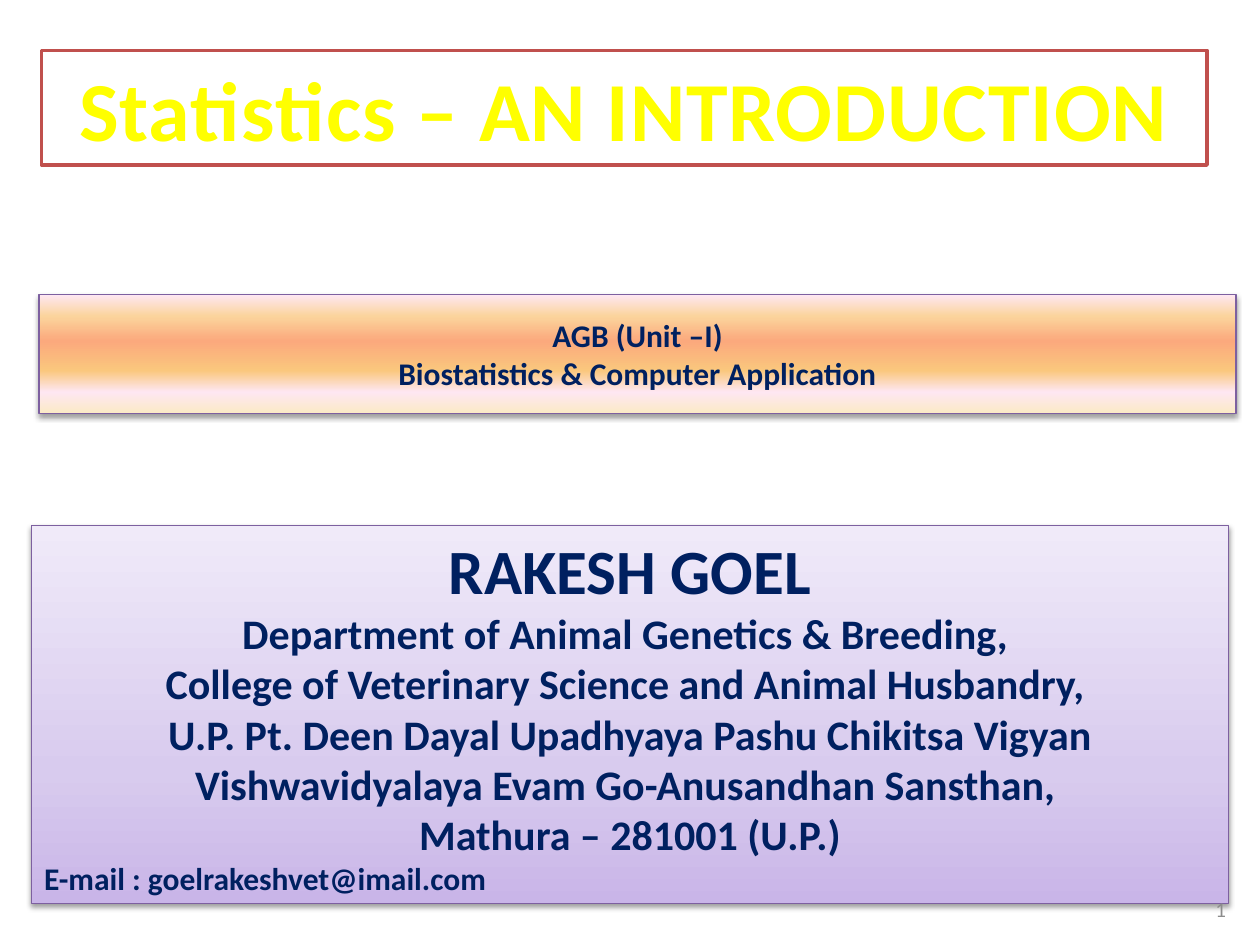
from lxml import etree
from pptx import Presentation
from pptx import util as u
from pptx.dml.color import RGBColor
from pptx.enum import shapes, text
from pptx.oxml.ns import qn

NAVY = "002060"
PURPLE = "7D60A0"
LILAC = [(0, "C9B5E8"), (35, "D8CBEE"), (100, "F0EAF9")]
SUNSET = [(0, "FBEAC7"), (18, "FEE7F2"), (36, "FAC77D"),
          (61, "FBA97D"), (82, "FBD49C"), (100, "FEE7F2")]
CENTER, LEFT, RIGHT = (text.PP_ALIGN.CENTER, text.PP_ALIGN.LEFT,
                       text.PP_ALIGN.RIGHT)


def color(hex_value):
    return RGBColor.from_string(hex_value)


class Deck:
    """Holds the shared style and the current slide."""

    font = {"name": "Calibri", "bold": True}

    def __init__(self, slide, ink):
        self.slide = slide
        self.ink = ink

    def place(self, shape, box):
        for side, inches in zip(("left", "top", "width", "height"), box):
            setattr(shape, side, u.Inches(inches))

    def outline(self, shape, hex_value, points):
        shape.line.color.rgb = color(hex_value)
        shape.line.width = u.Pt(points)

    def set_lines(self, shape, lines, **changes):
        """Fill in (text, size, alignment) lines; changes override the font."""
        frame = shape.text_frame
        frame.word_wrap = True
        frame.auto_size = text.MSO_AUTO_SIZE.NONE
        frame.vertical_anchor = text.MSO_ANCHOR.MIDDLE
        ink = changes.pop("ink", self.ink)
        for i, (words, size, align) in enumerate(lines):
            paragraph = frame.add_paragraph() if i else frame.paragraphs[0]
            paragraph.alignment = align
            paragraph.space_before = u.Pt(0)
            run = paragraph.add_run()
            run.text = words
            for key, value in {**self.font, "size": u.Pt(size), **changes}.items():
                setattr(run.font, key, value)
            run.font.color.rgb = color(ink)

    def title(self, words, box):
        heading = self.slide.shapes.title
        self.place(heading, box)
        heading.fill.solid()
        heading.fill.fore_color.rgb = color("FFFFFF")
        self.outline(heading, "C0504D", 2)
        self.set_lines(heading, [(words, 48, CENTER)], ink="FFFF00")
        heading.text_frame.auto_size = text.MSO_AUTO_SIZE.SHAPE_TO_FIT_TEXT
        heading.text_frame.paragraphs[0].runs[0].font._element.set("spc", "50")

    def panel(self, shape, box, stops, lines):
        """Give a shape a vertical gradient, a soft shadow and its lines."""
        self.place(shape, box)
        shape.fill.gradient()
        shape.fill.gradient_angle = 90
        stop_list = shape._element.spPr.find(".//" + qn("a:gsLst"))
        stop_list.clear()
        for percent, hex_value in stops:
            stop = etree.SubElement(stop_list, qn("a:gs"), pos=str(percent * 1000))
            etree.SubElement(stop, qn("a:srgbClr"), val=hex_value)
        self.outline(shape, PURPLE, 0.75)
        self.shadow(shape)
        self.set_lines(shape, lines)

    def shadow(self, shape):
        shape.shadow.inherit = False
        effects = shape._element.spPr.find(qn("a:effectLst"))
        outer = etree.SubElement(
            effects, qn("a:outerShdw"), blurRad=str(u.Pt(3.1)),
            dist=str(u.Pt(1.6)), dir="5400000", rotWithShape="0")
        black = etree.SubElement(outer, qn("a:srgbClr"), val="000000")
        etree.SubElement(black, qn("a:alpha"), val="38000")

    def affiliation(self, box, lines):
        self.panel(self.slide.placeholders[1], box, LILAC, lines)

    def course_band(self, box, lines):
        band = self.slide.shapes.add_shape(
            shapes.MSO_SHAPE.RECTANGLE, *map(u.Inches, box))
        self.panel(band, box, SUNSET, lines)

    def page_number(self, number, box):
        label = self.slide.shapes.add_textbox(*map(u.Inches, box))
        self.set_lines(label, [(number, 12, RIGHT)], ink="8C8C8C", bold=False)


def main():
    prs = Presentation()
    prs.slide_width, prs.slide_height = u.Inches(10), u.Inches(7.5)
    deck = Deck(prs.slides.add_slide(prs.slide_layouts[0]), NAVY)

    deck.title("Statistics – AN INTRODUCTION", (0.33, 0.4, 9.25, 0.91))
    address = [
        "Department of Animal Genetics & Breeding, ",
        "College of Veterinary Science and Animal Husbandry, ",
        "U.P. Pt. Deen Dayal Upadhyaya Pashu Chikitsa Vigyan "
        "Vishwavidyalaya Evam Go-Anusandhan Sansthan, ",
        "Mathura – 281001 (U.P.)",
    ]
    deck.affiliation((0.25, 4.17, 9.5, 3), [
        ("RAKESH GOEL", 36, CENTER),
        *((line, 24, CENTER) for line in address),
        ("E-mail : goelrakeshvet@imail.com", 18, LEFT),
    ])
    deck.page_number("1", (9, 7.08, 0.83, 0.27))
    deck.course_band((0.31, 2.34, 9.5, 0.94), [
        ("AGB (Unit –I)", 18, CENTER),
        ("Biostatistics & Computer Application", 18, CENTER),
    ])
    prs.save("out.pptx")


if __name__ == "__main__":
    main()
